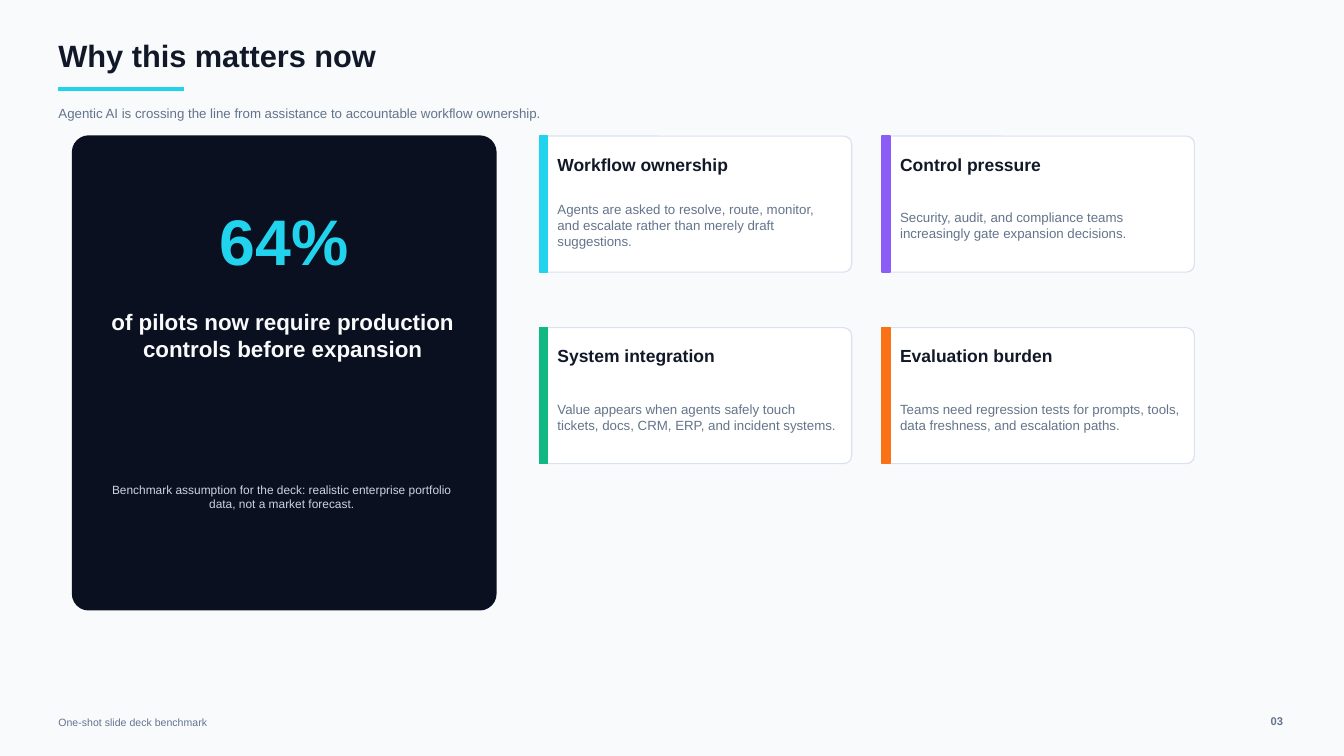
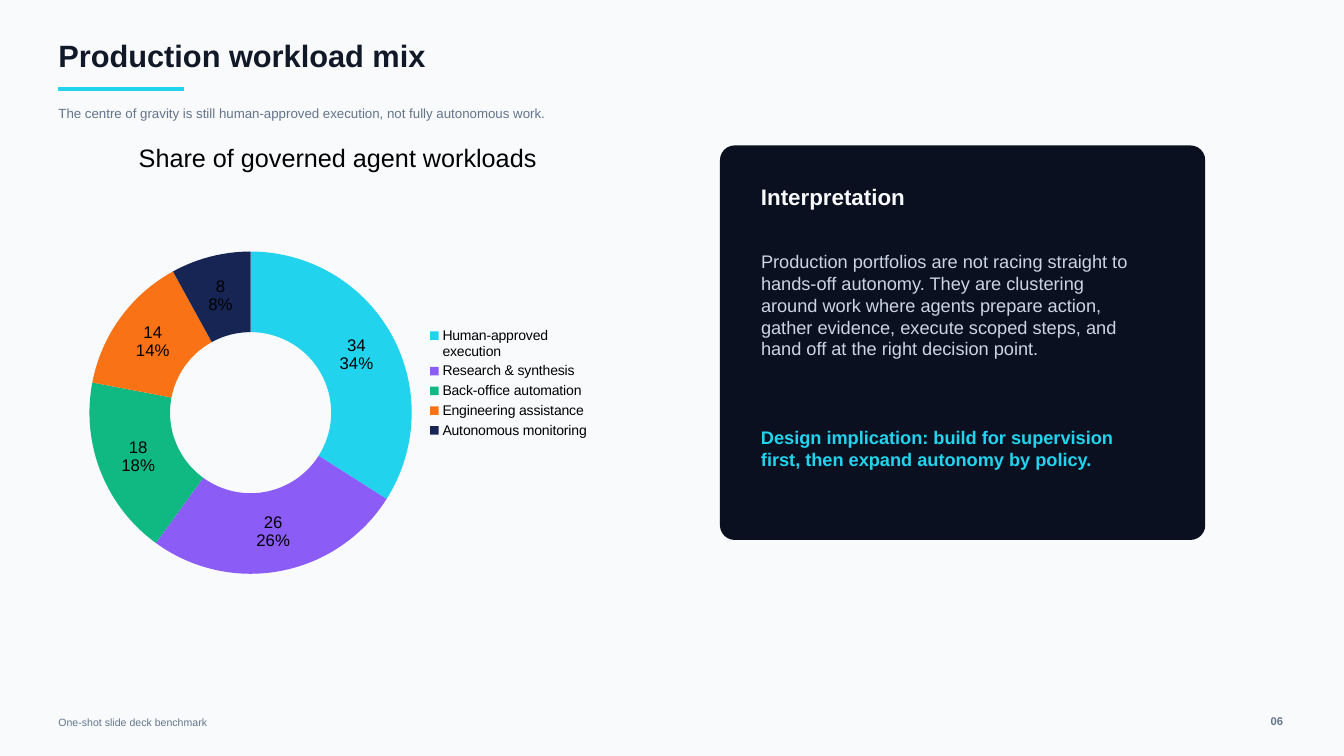
from lxml.etree import SubElement
from pptx import Presentation
from pptx.chart.data import CategoryChartData
from pptx.dml.color import RGBColor
from pptx.enum.chart import XL_CHART_TYPE as CHART, XL_LEGEND_POSITION as LEGEND
from pptx.enum.shapes import MSO_CONNECTOR as LINE, MSO_SHAPE as SHAPE
from pptx.enum.text import MSO_ANCHOR as ANCHOR, PP_ALIGN as ALIGN
from pptx.oxml.ns import qn
from pptx.util import Pt

COLORS = {
    "page": "F8FAFC", "ink": "111827", "muted": "64748B", "panel": "0B1020",
    "soft": "CBD5E1", "white": "FFFFFF", "border": "D8E2F0", "edge": "F9F9F9",
    "black": "000000", "cyan": "22D3EE", "violet": "8B5CF6",
    "green": "10B981", "orange": "F97316", "navy": "172554",
}
FONT = "Arial"
MARGIN = 41.76


def rgb(name):
    return RGBColor.from_string(COLORS[name])


def style(font, size, color, bold=False):
    font.name, font.size, font.bold = FONT, Pt(size), bold
    font.color.rgb = rgb(color)


class Deck:
    def __init__(self):
        self.prs = Presentation()
        self.prs.slide_width, self.prs.slide_height = Pt(960), Pt(540)
        self.s = None

    def slide(self, title, subtitle, number):
        self.s = self.prs.slides.add_slide(self.prs.slide_layouts[6])
        fill = self.s.background.fill
        fill.solid()
        fill.fore_color.rgb = rgb("page")
        self.text(title, MARGIN, 25.2, 633.6, 28.8, 22, "ink", True)
        self.rule(MARGIN, 63.36, 90)
        self.text(subtitle, MARGIN, 70.56, 612, 20.16, 9.5, "muted")
        self.text("One-shot slide deck benchmark", MARGIN, 509.76, 223.2, 12.96, 7.5, "muted")
        self.text(number, 869.76, 507.6, 46.8, 14.4, 8, "muted", True, ALIGN.RIGHT)

    def text(self, text, x, y, w, h, size, color, bold=False, align=ALIGN.LEFT):
        tf = self.s.shapes.add_textbox(Pt(x), Pt(y), Pt(w), Pt(h)).text_frame
        tf.word_wrap = True
        tf.vertical_anchor = ANCHOR.MIDDLE
        tf.margin_left = tf.margin_top = tf.margin_right = tf.margin_bottom = 0
        p = tf.paragraphs[0]
        p.alignment = align
        r = p.add_run()
        r.text = text
        style(r.font, size, color, bold)

    def rule(self, x, y, w):
        sp = self.s.shapes.add_connector(LINE.STRAIGHT, Pt(x), Pt(y), Pt(x + w), Pt(y))
        sp.line.color.rgb = rgb("cyan")
        sp.line.width = Pt(3)
        SubElement(sp._element.spPr, qn("a:effectLst"))

    def box(self, x, y, w, h, fill, line=None, width=1, radius=0):
        kind = SHAPE.ROUNDED_RECTANGLE if radius else SHAPE.RECTANGLE
        sp = self.s.shapes.add_shape(kind, Pt(x), Pt(y), Pt(w), Pt(h))
        if radius:
            sp.adjustments[0] = radius / min(w, h)
        sp.shadow.inherit = False
        sp.fill.solid()
        sp.fill.fore_color.rgb = rgb(fill)
        sp.line.color.rgb = rgb(line or fill)
        sp.line.width = Pt(width)

    def card(self, x, y, title, body, accent):
        w = 223.2
        h = 97.2
        self.box(x, y, w, h, "white", "border", 0.8, radius=5.75)
        self.box(x, y, 5.76, h, accent)
        self.text(title, x + 12.96, y + 10.08, 200.16, 20.16, 12.5, "ink", True)
        self.text(body, x + 12.96, y + 37.44, 200.16, 52.56, 9.5, "muted")

    def doughnut(self, x, y, size, title, slices):
        data = CategoryChartData()
        data.categories = [name for name, _, _ in slices]
        data.add_series("Series 1", [value for _, value, _ in slices])
        chart = self.s.shapes.add_chart(
            CHART.DOUGHNUT, Pt(x), Pt(y), Pt(size), Pt(size), data).chart
        style(chart.font, 10, "black")
        chart.has_title = True
        r = chart.chart_title.text_frame.paragraphs[0].add_run()
        r.text = title
        style(r.font, 18, "black")
        chart.has_legend = True
        chart.legend.position = LEGEND.RIGHT
        chart.legend.include_in_layout = False
        style(chart.legend.font, 10, "black")

        plot = chart.plots[0]
        plot.vary_by_categories = True
        plot._element.find(qn("c:holeSize")).set("val", "55")
        series = plot.series[0]
        series.format.line.color.rgb = rgb("edge")
        series.format.line.width = Pt(0.75)
        for i, (_, _, color) in enumerate(slices):
            fill = series.points[i].format.fill
            fill.solid()
            fill.fore_color.rgb = rgb(color)
        labels = series.data_labels
        labels.show_value = labels.show_percentage = True
        style(labels.font, 12, "black")
        separator = SubElement(labels._element, qn("c:separator"))
        separator.text = "\n"
        labels._element.find(qn("c:showBubbleSize")).addnext(separator)


def why_now(deck):
    deck.slide("Why this matters now",
               "Agentic AI is crossing the line from assistance to accountable workflow ownership.",
               "03")
    deck.box(51.84, 97.2, 302.4, 338.4, "panel", radius=11.5)
    deck.text("64%", 80.64, 144, 244.8, 54, 46, "cyan", True, ALIGN.CENTER)
    deck.text("of pilots now require production controls before expansion",
              77.76, 212.4, 248.4, 53.28, 16, "page", True, ALIGN.CENTER)
    deck.text("Benchmark assumption for the deck: realistic enterprise portfolio data, "
              "not a market forecast.",
              73.44, 342, 255.6, 25.92, 8.5, "soft", align=ALIGN.CENTER)
    cards = [
        ("Workflow ownership", "Agents are asked to resolve, route, monitor, and escalate "
         "rather than merely draft suggestions.", "cyan"),
        ("Control pressure", "Security, audit, and compliance teams increasingly gate "
         "expansion decisions.", "violet"),
        ("System integration", "Value appears when agents safely touch tickets, docs, CRM, "
         "ERP, and incident systems.", "green"),
        ("Evaluation burden", "Teams need regression tests for prompts, tools, data "
         "freshness, and escalation paths.", "orange"),
    ]
    for i, card in enumerate(cards):
        row, col = divmod(i, 2)
        deck.card(385.2 + col * 244.8, 97.2 + row * 136.8, *card)


def workload_mix(deck):
    deck.slide("Production workload mix",
               "The centre of gravity is still human-approved execution, not fully autonomous work.",
               "06")
    deck.doughnut(54, 86.4, 374.4, "Share of governed agent workloads", [
        ("Human-approved execution", 34, "cyan"),
        ("Research & synthesis", 26, "violet"),
        ("Back-office automation", 18, "green"),
        ("Engineering assistance", 14, "orange"),
        ("Autonomous monitoring", 8, "navy"),
    ])
    deck.box(514.8, 104.4, 345.6, 280.8, "panel", radius=10)
    left = 543.6
    deck.text("Interpretation", left, 129.6, 273.6, 21.6, 16, "page", True)
    deck.text("Production portfolios are not racing straight to hands-off autonomy. They are "
              "clustering around work where agents prepare action, gather evidence, execute "
              "scoped steps, and hand off at the right decision point.",
              left, 169.2, 270, 97.2, 13, "soft")
    deck.text("Design implication: build for supervision first, then expand autonomy by policy.",
              left, 302.4, 266.4, 36, 13, "cyan", True)


def main():
    deck = Deck()
    why_now(deck)
    workload_mix(deck)
    deck.prs.save("out.pptx")


if __name__ == "__main__":
    main()
